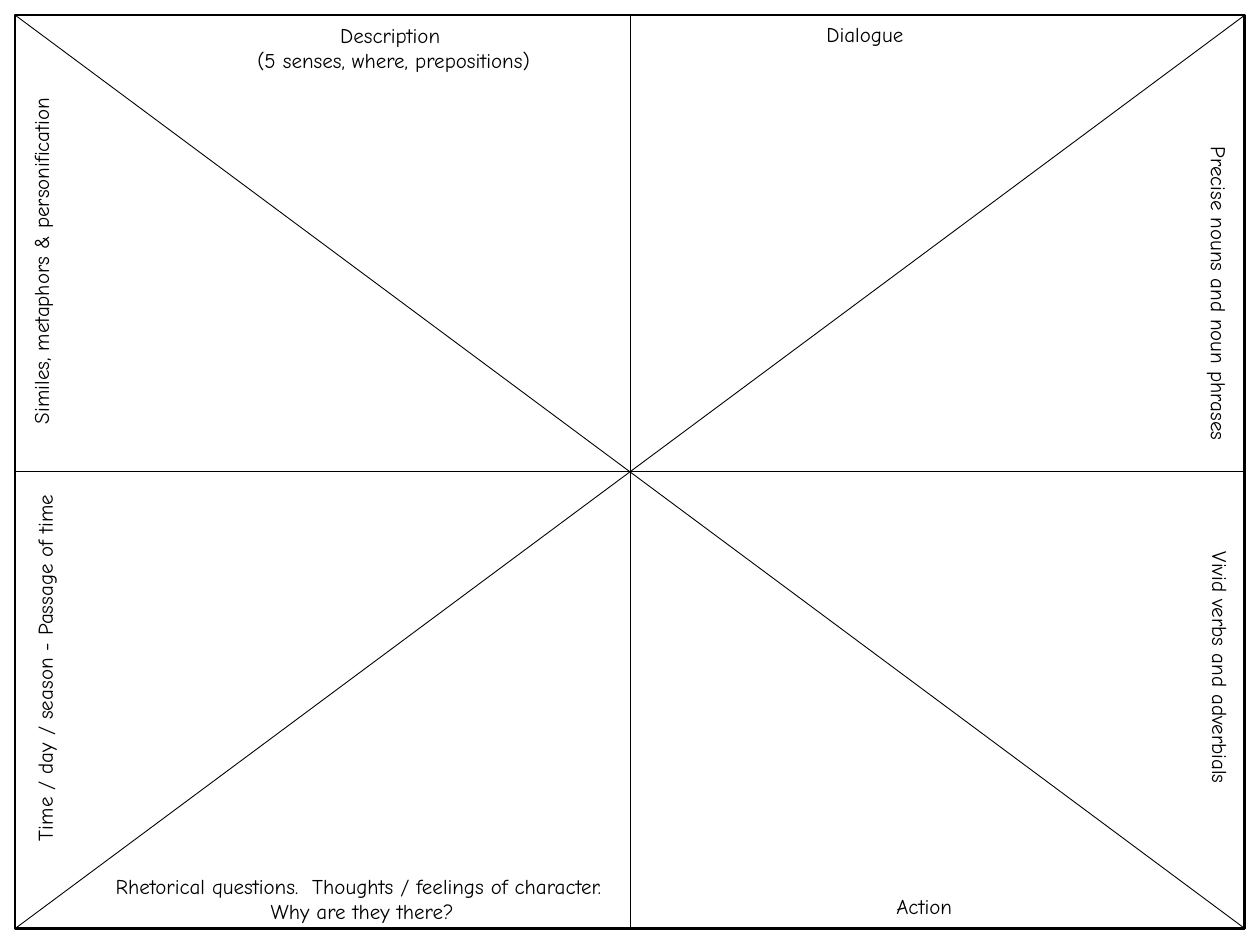
from lxml.etree import SubElement
from pptx import Presentation
from pptx.dml.color import RGBColor
from pptx.enum.shapes import MSO_CONNECTOR, MSO_SHAPE
from pptx.enum.text import MSO_AUTO_SIZE, PP_ALIGN
from pptx.oxml.ns import qn
from pptx.util import Inches, Pt

BLACK = RGBColor(0, 0, 0)
FONT = "Comic Neue"
LEFT, TOP, WIDTH, HEIGHT = 0.12, 0.12, 9.76, 7.25
RIGHT, BOTTOM = LEFT + WIDTH, TOP + HEIGHT
MIDDLE_X, MIDDLE_Y = LEFT + WIDTH / 2, TOP + HEIGHT / 2
LABEL_WIDTH, LINE_HEIGHT, TWO_LINES = 4.13, 0.3, 0.5

LABELS = [
    ("Description \v(5 senses, where, prepositions)", 1.06, 0.13, TWO_LINES, 0),
    ("Dialogue", 4.8, 0.12, LINE_HEIGHT, 0),
    ("Precise nouns and noun phrases", 7.61, 2.18, LINE_HEIGHT, 90),
    ("Action", 5.27, 7.04, LINE_HEIGHT, 0),
    ("Vivid verbs and adverbials", 7.62, 5.15, LINE_HEIGHT, 90),
    ("Similes, metaphors & personification", -1.74, 1.92, LINE_HEIGHT, 270),
    ("Time / day / season - Passage of time", -1.71, 5.15, LINE_HEIGHT, 270),
    ("Rhetorical questions.  Thoughts / feelings of character.  Why are they there?",
     0.81, 6.88, TWO_LINES, 0),
]
DIAGONALS = [(LEFT, TOP, RIGHT, BOTTOM), (LEFT, BOTTOM, RIGHT, TOP)]
CROSS = [
    ((MIDDLE_X, TOP, MIDDLE_X, BOTTOM), 0, 2),
    ((LEFT, MIDDLE_Y, RIGHT, MIDDLE_Y), 1, 3),
]


def add_frame(page):
    frame = page.shapes.add_shape(
        MSO_SHAPE.RECTANGLE, Inches(LEFT), Inches(TOP), Inches(WIDTH), Inches(HEIGHT))
    frame.shadow.inherit = False
    frame.fill.background()
    frame.line.color.rgb = BLACK
    frame.line.width = Pt(1.5)
    return frame


def add_line(page, ends):
    line = page.shapes.add_connector(
        MSO_CONNECTOR.STRAIGHT, *(Inches(value) for value in ends))
    line.line.color.rgb = BLACK
    line.line.width = Pt(0.5)
    SubElement(line._element.spPr, qn("a:effectLst"))
    return line


def add_label(page, text, left, top, height, rotation):
    box = page.shapes.add_textbox(
        Inches(left), Inches(top), Inches(LABEL_WIDTH), Inches(height))
    box.rotation = rotation
    box.text_frame.word_wrap = True
    box.text_frame.auto_size = MSO_AUTO_SIZE.SHAPE_TO_FIT_TEXT
    box.text_frame.text = text
    para = box.text_frame.paragraphs[0]
    para.alignment = PP_ALIGN.CENTER
    for span in para.runs:
        span.font.name = FONT
        span.font.size = Pt(12)
        span.font.color.rgb = BLACK


def main():
    deck = Presentation()
    deck.slide_width, deck.slide_height = Inches(10), Inches(7.5)
    page = deck.slides.add_slide(deck.slide_layouts[6])
    frame = add_frame(page)
    for ends in DIAGONALS:
        add_line(page, ends)
    for ends, start_side, end_side in CROSS:
        line = add_line(page, ends)
        line.begin_connect(frame, start_side)
        line.end_connect(frame, end_side)
    for label in LABELS:
        add_label(page, *label)
    deck.save("out.pptx")


if __name__ == "__main__":
    main()
